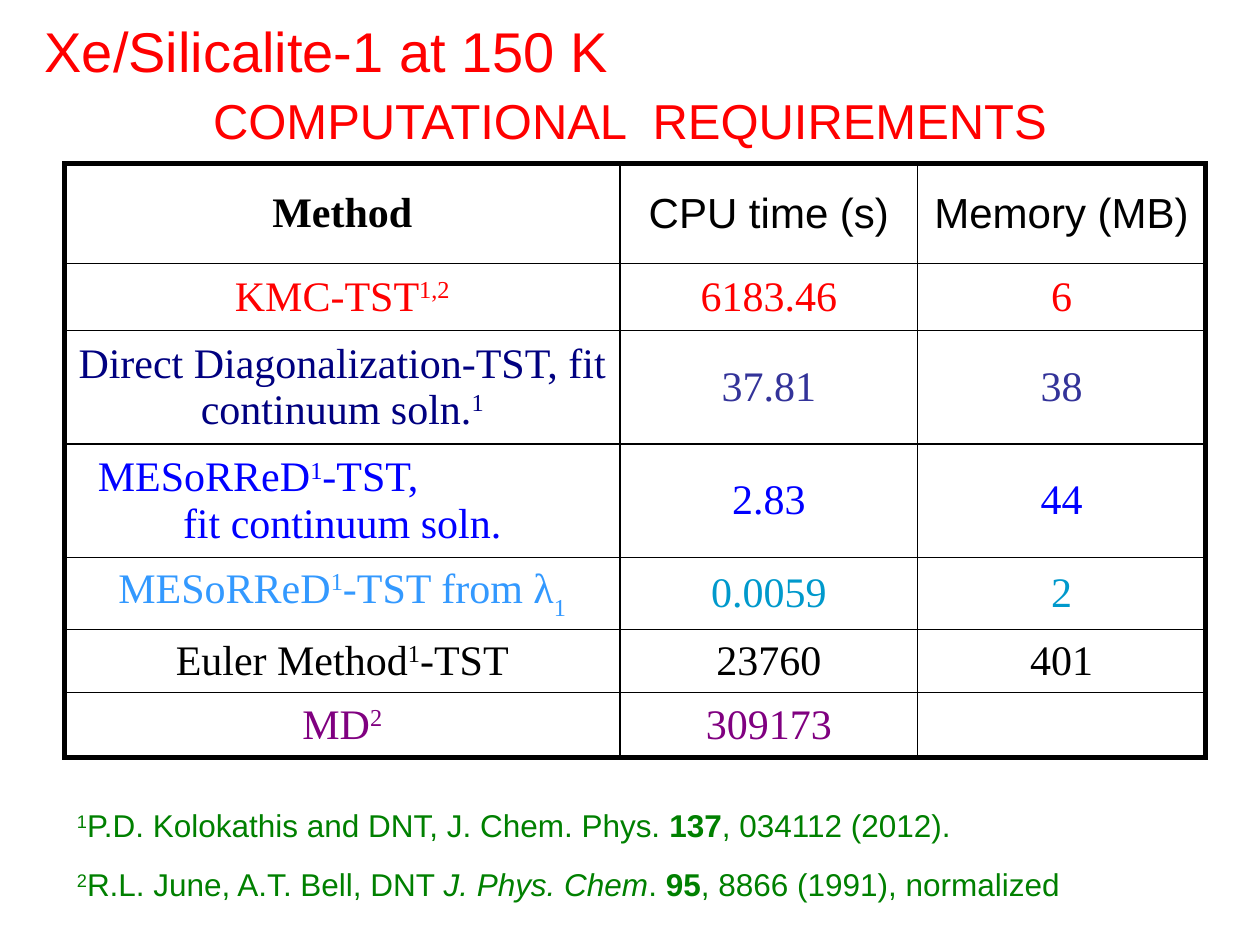
from lxml import etree
from pptx import Presentation
from pptx.dml.color import RGBColor
from pptx.enum.text import MSO_ANCHOR, PP_ALIGN
from pptx.oxml.ns import qn
from pptx.util import Cm, Pt

COLORS = {
    "black": "000000", "red": "FF0000", "navy": "000080", "indigo": "333399",
    "blue": "0000FF", "sky": "3399FF", "teal": "0099CC", "purple": "800080",
    "green": "008000",
}
SUPER, SUB = {"baseline": 30000}, {"baseline": -30000}
BOLD, ITALIC = {"bold": True}, {"italic": True}


def write(para, runs, color, **formats):
    """Fill a paragraph with runs: plain strings or (text, extra formats)."""
    for run in runs:
        text, extra = (run, {}) if isinstance(run, str) else run
        span = para.add_run()
        span.text = text
        span.font.color.rgb = RGBColor.from_string(COLORS[color])
        for name, value in {**formats, **extra}.items():
            if name == "baseline":
                span._r.get_or_add_rPr().set(name, str(value))
            else:
                setattr(span.font, name, value)


def draw_border(cell, side, width):
    line = etree.SubElement(cell._tc.get_or_add_tcPr(), qn(f"a:ln{side}"), w=str(Pt(width)))
    fill = etree.SubElement(line, qn("a:solidFill"))
    etree.SubElement(fill, qn("a:srgbClr"), val=COLORS["black"])


deck = Presentation()
deck.slide_width, deck.slide_height = Cm(25.4), Cm(19.05)
page = deck.slides.add_slide(deck.slide_layouts[6])

# Title
box = page.shapes.add_textbox(Cm(0), Cm(-0.08), Cm(25.4), Cm(2.92))
frame = box.text_frame
frame.word_wrap = True
frame.margin_top = Cm(0.42)
system, topic = frame.paragraphs[0], frame.add_paragraph()
system._p.get_or_add_pPr().set("marL", str(Cm(0.65)))
topic.alignment = PP_ALIGN.CENTER
topic.space_before = Pt(3.5)
write(system, ["Xe/Silicalite-1 at 150 K"], "red", name="Arial", size=Pt(32))
write(topic, ["COMPUTATIONAL  REQUIREMENTS"], "red", name="Arial", size=Pt(28))

# Table content: method paragraphs, method colour, CPU time, memory, value colour
methods = [
    ([["KMC-TST", ("1,2", SUPER)]], "red", "6183.46", "6", "red"),
    ([["Direct Diagonalization-TST, fit continuum soln.", ("1", SUPER)]],
     "navy", "37.81", "38", "indigo"),
    ([["MESoRReD", ("1", SUPER), "-TST,"], ["fit continuum soln."]],
     "blue", "2.83", "44", "blue"),
    ([["MESoRReD", ("1", SUPER), "-TST from λ", ("1", SUB)]], "sky", "0.0059", "2", "teal"),
    ([["Euler Method", ("1", SUPER), "-TST"]], "black", "23760", "401", "black"),
    ([["MD", ("2", SUPER)]], "purple", "309173", "", "purple"),
]
serif, sans = "Times New Roman", "Arial"
rows = [[([[("Method", BOLD)]], "black", serif),
         ([["CPU time (s)"]], "black", sans),
         ([["Memory (MB)"]], "black", sans)]]
for method, method_color, time, memory, value_color in methods:
    rows.append([(method, method_color, serif),
                 ([[time]], value_color, serif),
                 ([[memory]] if memory else [[]], value_color, serif)])

# Table
widths = [11.2, 6, 5.8]
heights = [2.01, 1.35, 2.29, 2.29, 1.35, 1.27, 1.31]
table = page.shapes.add_table(len(rows), len(widths), Cm(1.3), Cm(3.3),
                              Cm(sum(widths)), Cm(sum(heights))).table
table.first_row = table.horz_banding = False
for column, width in zip(table.columns, widths):
    column.width = Cm(width)
for row, height in zip(table.rows, heights):
    row.height = Cm(height)

for r, row in enumerate(rows):
    for c, (paragraphs, color, font) in enumerate(row):
        cell = table.cell(r, c)
        cell.vertical_anchor = MSO_ANCHOR.MIDDLE
        outer = {"L": c == 0, "R": c == len(widths) - 1,
                 "T": r == 0, "B": r == len(rows) - 1}
        for side, is_outer in outer.items():
            draw_border(cell, side, 3 if is_outer else 1)
        cell.fill.background()
        for i, runs in enumerate(paragraphs):
            para = cell.text_frame.paragraphs[0] if i == 0 else cell.text_frame.add_paragraph()
            para.alignment = PP_ALIGN.CENTER
            write(para, runs, color, name=font, size=Pt(24))

# The two-line method starts at the left
first_line = table.cell(3, 0).text_frame.paragraphs[0]
first_line.alignment = PP_ALIGN.LEFT
first_line._p.get_or_add_pPr().set("marL", str(Cm(0.42)))

# References
references = [
    (17.32, [("2", SUPER), "R.L. June, A.T. Bell, DNT ", ("J. Phys. Chem", ITALIC), ". ",
             ("95", BOLD), ", 8866 (1991), normalized"]),
    (16.13, [("1", SUPER), "P.D. Kolokathis and DNT, J. Chem. Phys. ",
             ("137", BOLD), ", 034112 (2012)."]),
]
for top, runs in references:
    box = page.shapes.add_textbox(Cm(1.3), Cm(top), Cm(23), Cm(1.02))
    box.text_frame.word_wrap = True
    write(box.text_frame.paragraphs[0], runs, "green", name="Arial", size=Pt(18))

deck.save("out.pptx")
